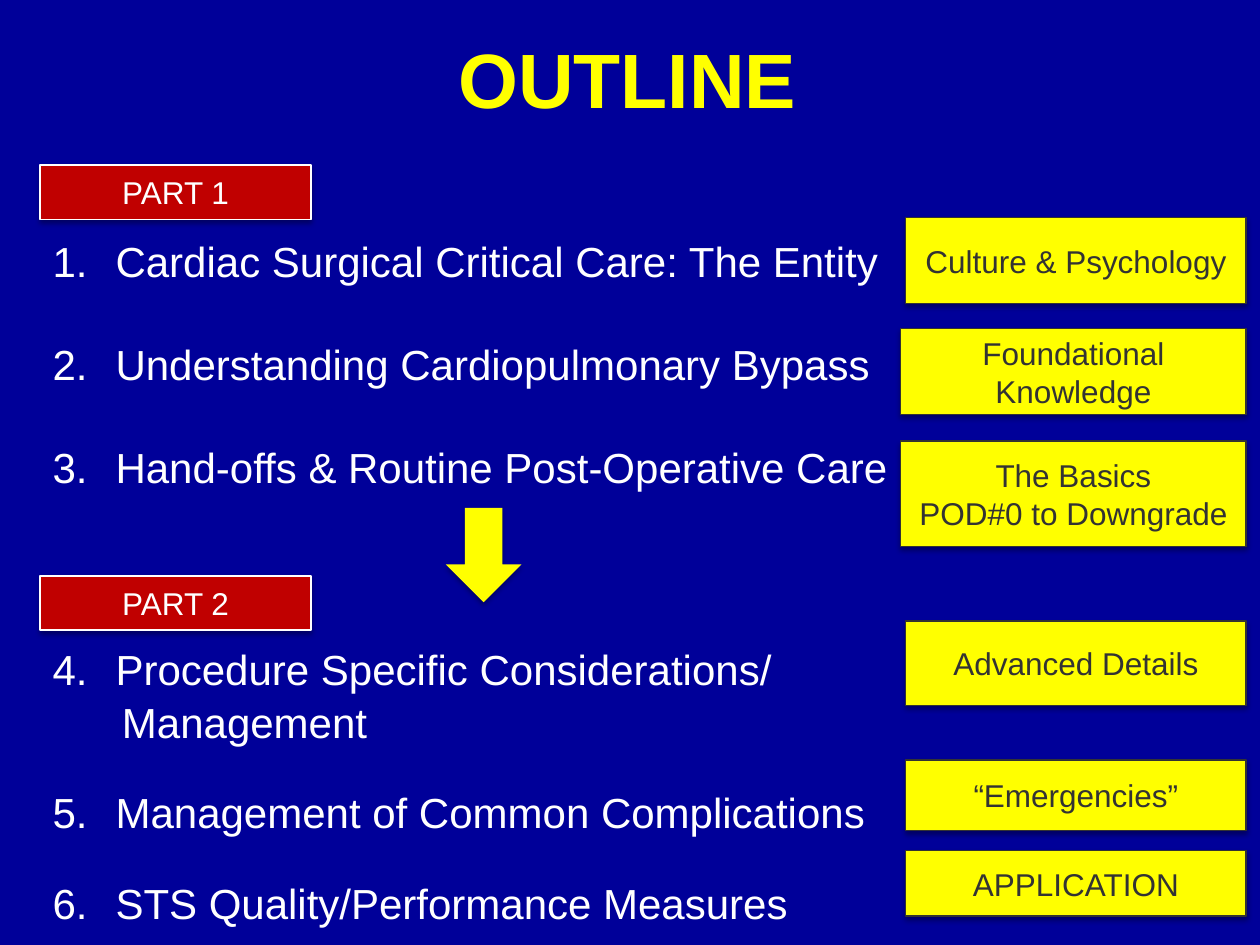
from lxml import etree
from pptx import Presentation
from pptx.dml.color import RGBColor
from pptx.enum.shapes import MSO_SHAPE
from pptx.enum.text import MSO_ANCHOR, PP_ALIGN
from pptx.oxml.ns import qn
from pptx.util import Cm, Pt

RECT, ARROW = MSO_SHAPE.RECTANGLE, MSO_SHAPE.DOWN_ARROW
CENTER, LEFT = PP_ALIGN.CENTER, PP_ALIGN.LEFT
MIDDLE, BOTTOM, TOP = MSO_ANCHOR.MIDDLE, MSO_ANCHOR.BOTTOM, MSO_ANCHOR.TOP

NAVY, YELLOW, RED = "000099", "FFFF00", "C00000"
WHITE, GREY = "FFFFFF", "333333"
INDENT = 1.27
EDGE = 25.12  # right edge shared by the cards

# text, number the list starts from (None: unnumbered), space before in points
TOPICS = [
    ("Cardiac Surgical Critical Care: The Entity", 1, 0),
    ("Understanding Cardiopulmonary Bypass", 1, 30),
    ("Hand-offs & Routine Post-Operative Care", 1, 30),
    ("Procedure Specific Considerations/", 4, 87),
    ("Management", None, 1.2),
    ("Management of Common Complications", 5, 23),
    ("STS Quality/Performance Measures", 5, 23),
]

# text, top, width, height in cm
CARDS = [
    ("Culture & Psychology", 4.39, 6.86, 1.73),
    ("Foundational Knowledge", 6.63, 6.96, 1.73),
    ("The Basics\nPOD#0 to Downgrade", 8.89, 6.96, 2.13),
    ("Advanced Details", 12.52, 6.86, 1.7),
    ("“Emergencies”", 15.32, 6.86, 1.42),
    ("APPLICATION", 17.15, 6.86, 1.32),
]


def rgb(code):
    return RGBColor.from_string(code)


def style(para, size, color, align=CENTER, bold=False):
    para.alignment = align
    for run in para.runs:
        font = run.font
        font.name, font.size, font.bold = "Arial", Pt(size), bold
        font.color.rgb = rgb(color)


def add_shadow(shape):
    """Give the shape a soft shadow that falls straight down."""
    shape.shadow.inherit = False
    effects = shape._element.spPr.find(qn("a:effectLst"))
    outer = etree.SubElement(
        effects, qn("a:outerShdw"), blurRad=str(Pt(3.1)), dist=str(Pt(1.8)),
        dir="5400000", rotWithShape="0")
    color = etree.SubElement(outer, qn("a:srgbClr"), val="000000")
    etree.SubElement(color, qn("a:alpha"), val="35000")


def add_block(slide, kind, box, fill, line=None):
    shape = slide.shapes.add_shape(kind, *map(Cm, box))
    shape.fill.solid()
    shape.fill.fore_color.rgb = rgb(fill)
    if line:
        shape.line.color.rgb = rgb(line)
        shape.line.width = Pt(0.75)
    else:
        shape.line.fill.background()
    add_shadow(shape)
    return shape


def add_label(slide, text, box, fill, ink):
    """Add a bordered box whose text has the colour of its border."""
    frame = add_block(slide, RECT, box, fill, ink).text_frame
    frame.text = text
    frame.word_wrap = True
    frame.vertical_anchor = MIDDLE
    for para in frame.paragraphs:
        style(para, 18, ink)


def number(para, start):
    """Indent the paragraph, and number it unless start is None."""
    props = para._p.get_or_add_pPr()
    if start is None:
        props.set("marL", str(Cm(INDENT + 0.13)))
        return
    props.set("marL", str(Cm(INDENT)))
    props.set("indent", str(-Cm(INDENT)))
    auto = etree.SubElement(props, qn("a:buAutoNum"), type="arabicPeriod")
    if start > 1:
        auto.set("startAt", str(start))


def add_topics(slide):
    box = slide.shapes.add_textbox(Cm(0.81), Cm(4.62), Cm(23.42), Cm(14.5))
    frame = box.text_frame
    frame.word_wrap = True
    frame.vertical_anchor = TOP
    frame.text = "\n".join(text for text, _, _ in TOPICS)
    for para, (_, start, gap) in zip(frame.paragraphs, TOPICS):
        number(para, start)
        if gap:
            para.space_before = Pt(gap)
        style(para, 24, WHITE, LEFT)


def set_title(slide, text):
    title = slide.shapes.title
    title.left, title.top = Cm(1.22), Cm(0.69)
    title.width, title.height = Cm(22.86), Cm(1.93)
    frame = title.text_frame
    frame.text = text
    frame.vertical_anchor = BOTTOM
    style(frame.paragraphs[0], 44, YELLOW, bold=True)


def main():
    deck = Presentation()
    deck.slide_width, deck.slide_height = Cm(25.4), Cm(19.05)
    slide = deck.slides.add_slide(deck.slide_layouts[5])
    back = slide.background.fill
    back.solid()
    back.fore_color.rgb = rgb(NAVY)

    set_title(slide, "OUTLINE")
    add_topics(slide)
    for text, top, width, height in CARDS:
        add_label(slide, text, (EDGE - width, top, width, height), YELLOW, GREY)
    add_block(slide, ARROW, (8.99, 10.24, 1.52, 1.9), YELLOW)
    for text, top in (("PART 1", 3.33), ("PART 2", 11.61)):
        add_label(slide, text, (0.81, top, 5.46, 1.09), RED, WHITE)
    deck.save("out.pptx")


if __name__ == "__main__":
    main()
